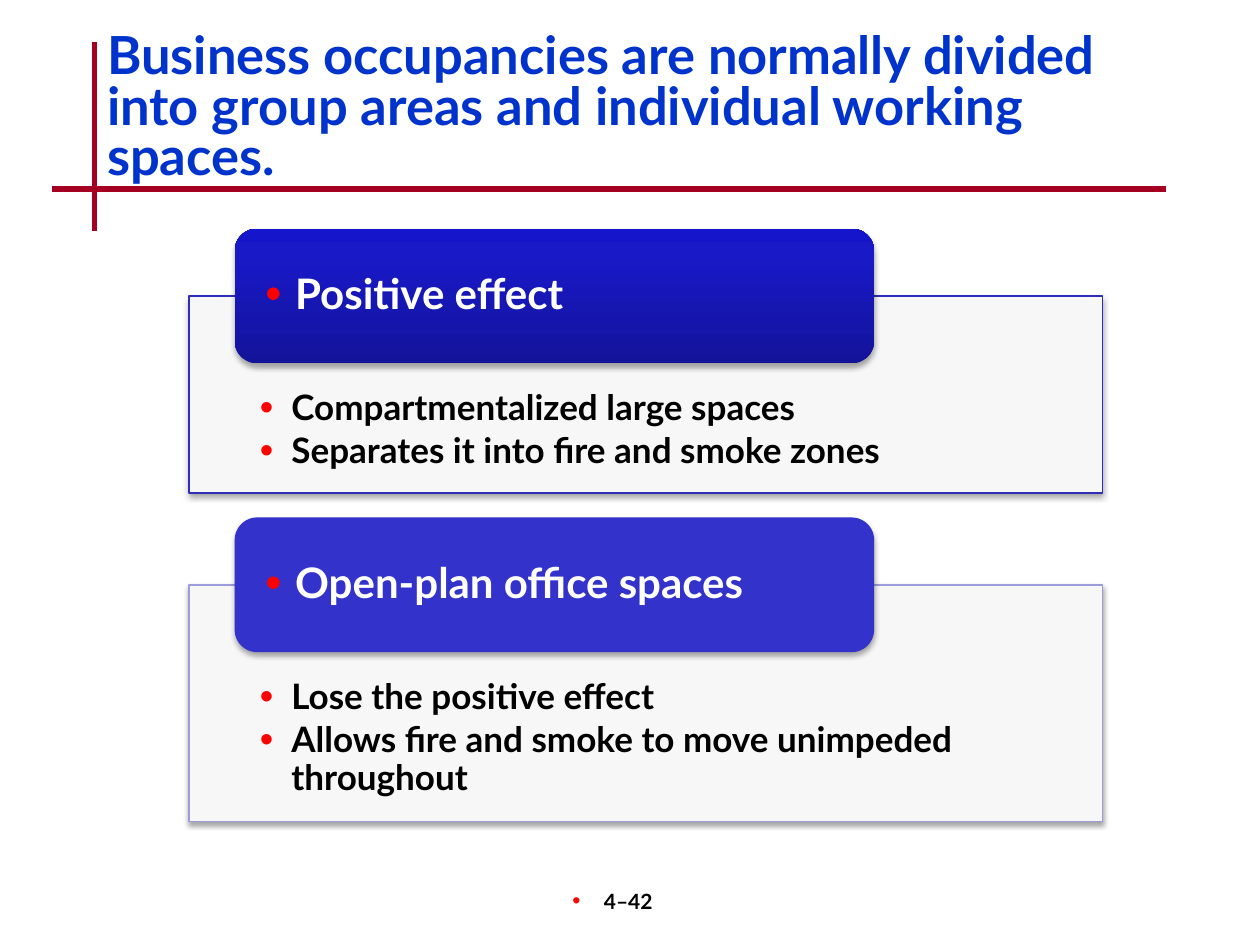
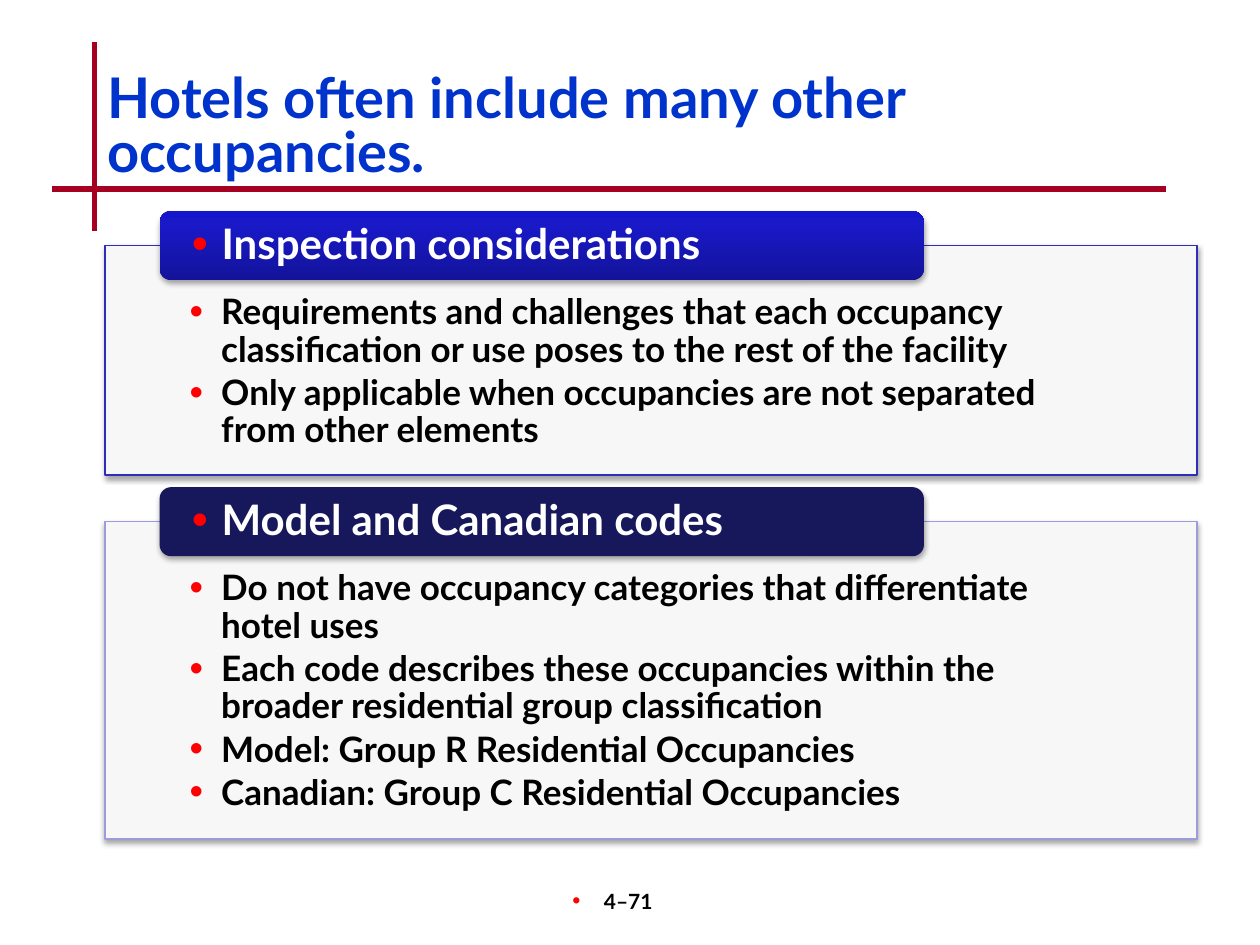
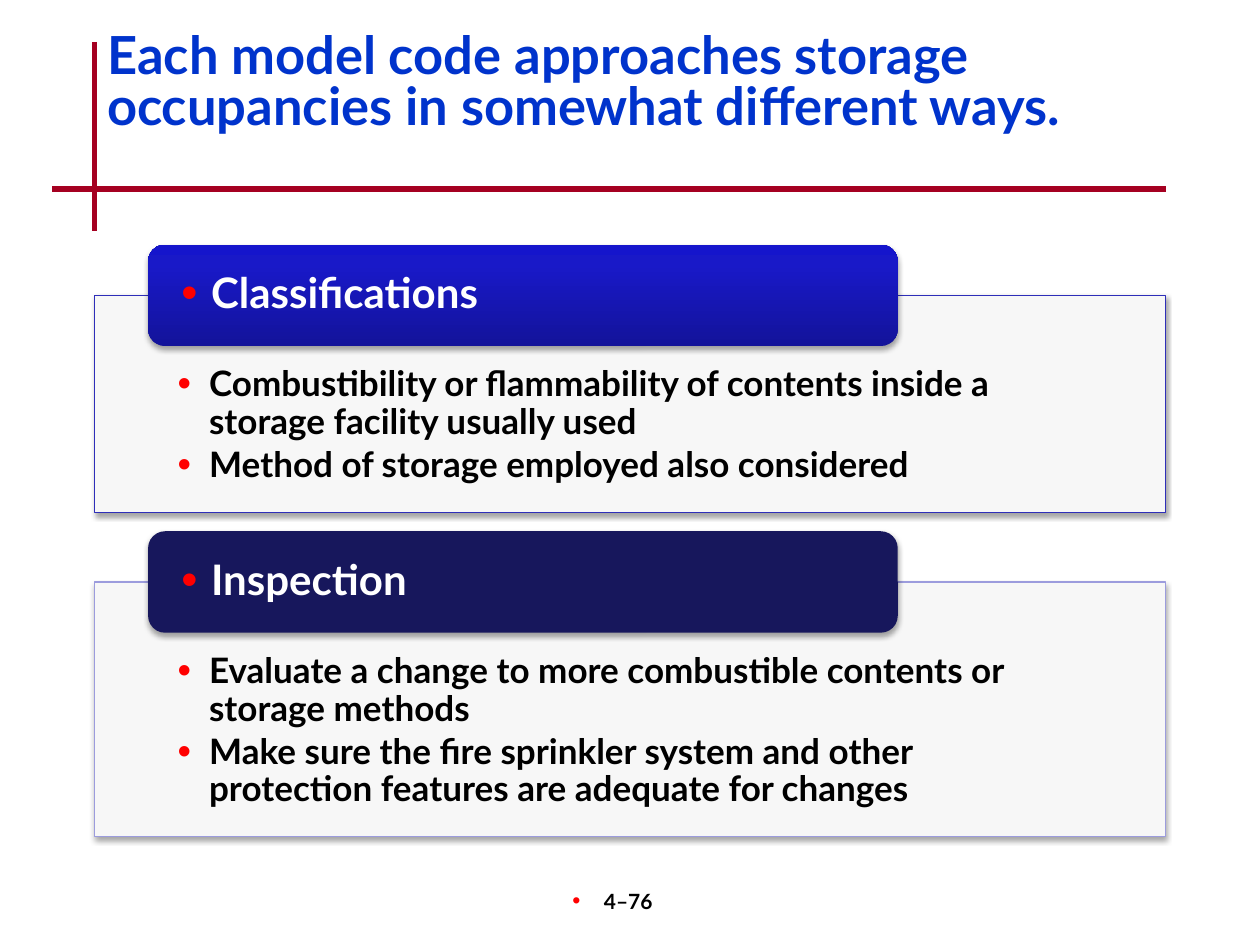
import copy

import pptx
import pptx.dml.color
import pptx.enum.shapes
import pptx.enum.text
import pptx.oxml
import pptx.oxml.ns
import pptx.util

Pt = pptx.util.Pt
FONT, BULLET_FONT = "Lato", "Arial"
COLORS = {
    "title": "0033CC", "rule": "A50021", "bullet": "FF0000",
    "text": "000000", "white": "FFFFFF", "card": "F7F7F7",
    "edge_dark": "2E2EB9", "edge_light": "9C9CDD",
    "blue": "3333CC", "navy": "17175C",
}
TAB_GRADIENT = [(0, "13139A"), (0.8, "1919C8"), (1, "1515CC")]
RULES = [(54, 24, 54, 132), (30, 108, 666, 108)]
LIST_HANG, TAB_HANG, NUMBER_HANG = 18, 17, 18
NAMESPACE = 'xmlns:a="http://schemas.openxmlformats.org/drawingml/2006/main"'
SHADOW = (
    f'<a:effectLst {NAMESPACE}><a:outerShdw blurRad="40000" dist="23000" dir="5400000" '
    'rotWithShape="0"><a:srgbClr val="000000"><a:alpha val="35000"/></a:srgbClr>'
    '</a:outerShdw></a:effectLst>'
)

# Cards: top, height, heading, list items
SLIDES = [
    {
        "title": "Business occupancies are normally divided into group areas "
                 "and individual working spaces.",
        "title_box": (54, 16, 624, 66), "title_size": 30, "number": "4–42",
        "left": 108, "width": 522, "tab_height": 77, "second_tab": "blue",
        "cards": [
            (169.2, 112.5, "Positive effect",
             ["Compartmentalized large spaces",
              "Separates it into fire and smoke zones"]),
            (334.2, 135.2, "Open-plan office spaces",
             ["Lose the positive effect",
              "Allows fire and smoke to move unimpeded throughout"]),
        ],
    },
    {
        "title": "Hotels often include many other occupancies.",
        "title_box": (54, 39.5, 612, 72), "title_size": 32, "number": "4–71",
        "left": 60, "width": 624, "tab_height": 39.5, "second_tab": "navy",
        "cards": [
            (140.4, 131, "Inspection considerations",
             ["Requirements and challenges that each occupancy classification "
              "or use poses to the rest of the facility",
              "Only applicable when occupancies are not separated from other elements"]),
            (298.1, 181.4, "Model and Canadian codes",
             ["Do not have occupancy categories that differentiate hotel uses",
              "Each code describes these occupancies within the broader "
              "residential group classification",
              "Model: Group R Residential Occupancies",
              "Canadian: Group C Residential Occupancies"]),
        ],
    },
    {
        "title": "Each model code approaches storage occupancies in somewhat different ways.",
        "title_box": (54, 16, 612, 72), "title_size": 30, "number": "4–76",
        "left": 54, "width": 612, "tab_height": 58, "second_tab": "navy",
        "cards": [
            (168.8, 124, "Classifications",
             ["Combustibility or flammability of contents inside a storage "
              "facility usually used",
              "Method of storage employed also considered"]),
            (332.6, 145.5, "Inspection",
             ["Evaluate a change to more combustible contents or storage methods",
              "Make sure the fire sprinkler system and other protection features "
              "are adequate for changes"]),
        ],
    },
]


def rgb(value):
    return pptx.dml.color.RGBColor.from_string(value)


def set_all(target, values):
    for name, value in values.items():
        setattr(target, name, value)


def place(shape, box):
    set_all(shape, dict(zip(("left", "top", "width", "height"), map(Pt, box))))


def set_frame(frame, anchor, insets):
    set_all(frame, {
        "word_wrap": True,
        "auto_size": pptx.enum.text.MSO_AUTO_SIZE.NONE,
        "vertical_anchor": anchor,
    })
    sides = ("margin_left", "margin_top", "margin_right", "margin_bottom")
    set_all(frame, dict(zip(sides, map(Pt, insets))))


def add_bullet(para, hang):
    properties = para._p.get_or_add_pPr()
    properties.set("marL", str(int(Pt(hang))))
    properties.set("indent", str(-int(Pt(hang))))
    for part in (
        f'<a:buClr {NAMESPACE}><a:srgbClr val="{COLORS["bullet"]}"/></a:buClr>',
        f'<a:buSzPct {NAMESPACE} val="110000"/>',
        f'<a:buFont {NAMESPACE} typeface="{BULLET_FONT}"/>',
        f'<a:buChar {NAMESPACE} char="•"/>',
    ):
        properties.append(pptx.oxml.parse_xml(part))


def write(frame, lines, size, color, hang=None, align="LEFT", spacing=1.0, after=0):
    for index, line in enumerate(lines):
        para = frame.paragraphs[0] if index == 0 else frame.add_paragraph()
        set_all(para, {
            "alignment": getattr(pptx.enum.text.PP_ALIGN, align),
            "line_spacing": spacing, "space_before": Pt(0), "space_after": Pt(after),
        })
        if hang is not None:
            add_bullet(para, hang)
        span = para.add_run()
        span.text = line
        set_all(span.font, {"name": FONT, "size": Pt(size), "bold": True})
        span.font.color.rgb = rgb(COLORS[color])


def add_rules(deck, page):
    """Draw the crossed title rules and move them to the master."""
    anchor = deck.slide_master.placeholders[0].element
    for number, ends in enumerate(RULES, start=21):
        rule = page.shapes.add_connector(
            pptx.enum.shapes.MSO_CONNECTOR.STRAIGHT, *map(Pt, ends))
        rule.line.color.rgb = rgb(COLORS["rule"])
        rule.line.width = Pt(3)
        rule.element.spPr.append(pptx.oxml.parse_xml(f"<a:effectLst {NAMESPACE}/>"))
        rule.element.nvCxnSpPr.cNvPr.set("id", str(number))
        anchor.addprevious(rule.element)


def add_title(page, text, box, size):
    title = page.shapes.title
    place(title, box)
    set_frame(title.text_frame, pptx.enum.text.MSO_ANCHOR.TOP, (7.2, 3.6, 7.2, 3.6))
    write(title.text_frame, [text], size, "title", spacing=0.8)


def add_page_number(page, text):
    box = page.shapes.add_textbox(*map(Pt, (275, 504, 150, 36)))
    set_frame(box.text_frame, pptx.enum.text.MSO_ANCHOR.TOP, (7.2, 3.6, 7.2, 3.6))
    write(box.text_frame, [text], 12, "text", hang=NUMBER_HANG, align="CENTER")


def fill_gradient(shape):
    shape.fill.gradient()
    shape.fill.gradient_angle = 90
    first = shape.element.spPr.find(".//" + pptx.oxml.ns.qn("a:gs"))
    first.addnext(copy.deepcopy(first))
    for stop, (position, color) in zip(shape.fill.gradient_stops, TAB_GRADIENT):
        stop.position = position
        stop.color.rgb = rgb(color)


def add_card(page, card, box, tab_height, heading, items, edge, tab_color):
    left, top, width, _ = box

    # Framed list
    place(card, box)
    card.fill.solid()
    card.fill.fore_color.rgb = rgb(COLORS["card"])
    card.line.color.rgb = rgb(COLORS[edge])
    card.line.width = Pt(0.75)
    card.element.spPr.append(pptx.oxml.parse_xml(SHADOW))
    side = 0.0776 * width
    set_frame(card.text_frame, pptx.enum.text.MSO_ANCHOR.TOP,
              (side, 0.7 * tab_height, side, 11.5))
    write(card.text_frame, items, 20, "text", hang=LIST_HANG, spacing=0.9, after=3)

    # Heading tab centred on the top edge
    tab = page.shapes.add_shape(
        pptx.enum.shapes.MSO_SHAPE.ROUNDED_RECTANGLE,
        *map(Pt, (left + 0.05 * width, top - tab_height / 2, 0.7 * width, tab_height)))
    if tab_color:
        tab.fill.solid()
        tab.fill.fore_color.rgb = rgb(COLORS[tab_color])
    else:
        fill_gradient(tab)
    tab.line.fill.background()
    tab.element.spPr.append(pptx.oxml.parse_xml(SHADOW))
    side = 0.0265 * width
    set_frame(tab.text_frame, pptx.enum.text.MSO_ANCHOR.MIDDLE, (side, 0, side, 0))
    write(tab.text_frame, [heading], 24, "white", hang=TAB_HANG, spacing=0.9)


def add_page(deck, content):
    page = deck.slides.add_slide(deck.slide_layouts.get_by_name("Two Content"))
    add_title(page, content["title"], content["title_box"], content["title_size"])
    lists = [holder for holder in page.placeholders if holder.placeholder_format.idx > 0]
    styles = [("edge_dark", None), ("edge_light", content["second_tab"])]
    for card, (top, height, heading, items), style in zip(lists, content["cards"], styles):
        box = (content["left"], top, content["width"], height)
        add_card(page, card, box, content["tab_height"], heading, items, *style)
    add_page_number(page, content["number"])
    return page


def main():
    deck = pptx.Presentation()
    deck.slide_width, deck.slide_height = Pt(720), Pt(540)
    pages = [add_page(deck, content) for content in SLIDES]
    add_rules(deck, pages[0])
    deck.save("out.pptx")


if __name__ == "__main__":
    main()
